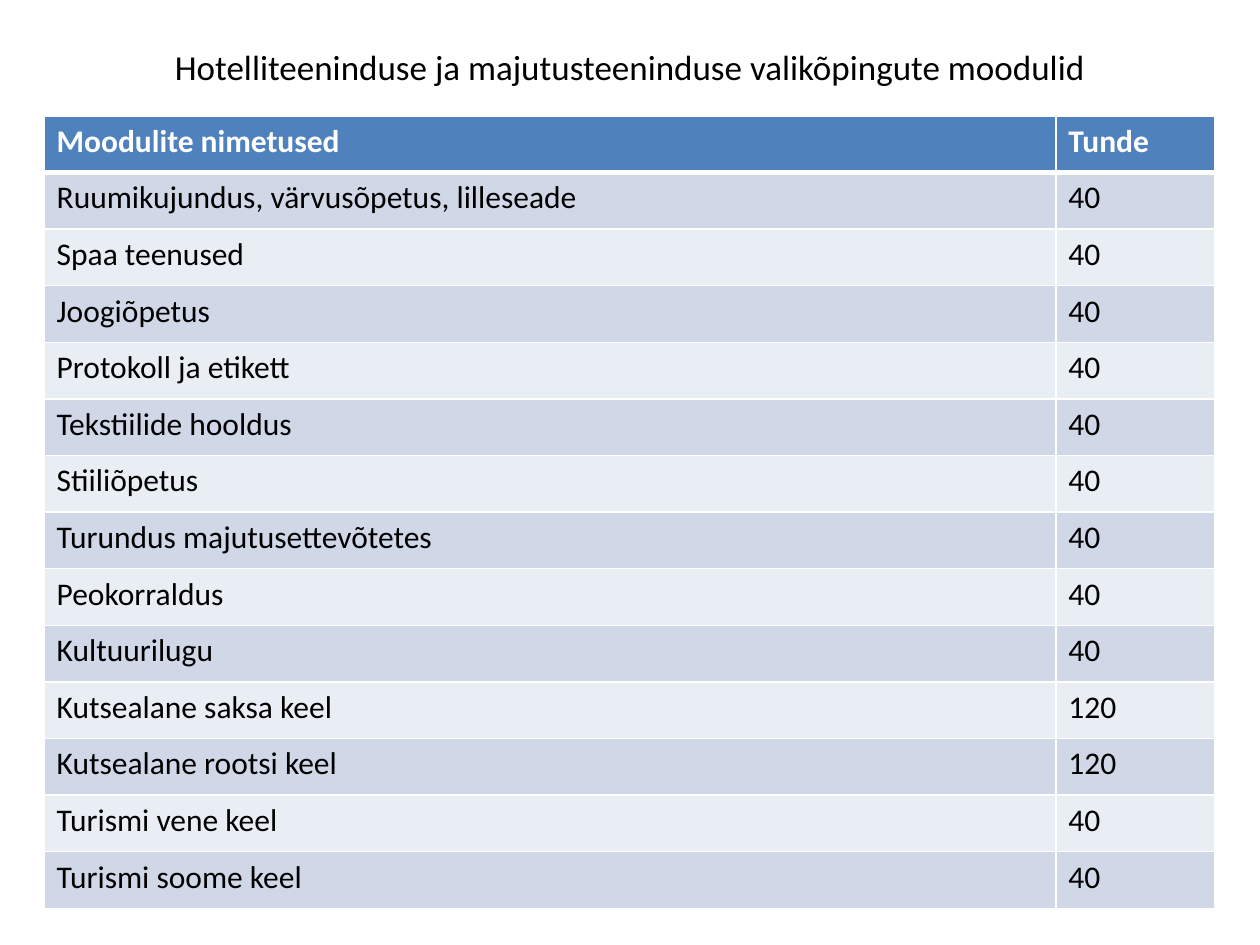
from typing import NamedTuple

from lxml.etree import SubElement
from pptx import Presentation
from pptx.dml.color import RGBColor
from pptx.enum.text import MSO_ANCHOR, PP_ALIGN
from pptx.oxml.ns import qn
from pptx.util import Inches, Pt


class Module(NamedTuple):
    name: str
    hours: int = 40


HEADINGS = ("Moodulite nimetused", "Tunde")
MODULES = [
    Module("Ruumikujundus, värvusõpetus, lilleseade"),
    Module("Spaa teenused"),
    Module("Joogiõpetus"),
    Module("Protokoll ja etikett"),
    Module("Tekstiilide hooldus"),
    Module("Stiiliõpetus"),
    Module("Turundus majutusettevõtetes"),
    Module("Peokorraldus"),
    Module("Kultuurilugu"),
    Module("Kutsealane saksa keel", 120),
    Module("Kutsealane rootsi keel", 120),
    Module("Turismi vene keel"),
    Module("Turismi soome keel"),
]
COLUMN_WIDTHS = (8.03, 1.26)
TABLE_HEIGHT = 6.29
HEADER_FILL = "4F81BD"
BAND_FILLS = ("D0D8E8", "E9EDF4")
WHITE, BLACK = "FFFFFF", "000000"


def rgb(value: str) -> RGBColor:
    return RGBColor.from_string(value)


def style_text(paragraph, size: float, color: str, bold: bool = False) -> None:
    font = paragraph.font
    font.name, font.size, font.bold = "Calibri", Pt(size), bold
    font.color.rgb = rgb(color)


def set_borders(cell, top: float = 1, bottom: float = 1) -> None:
    """Draw white cell borders; widths are in points."""
    properties = cell._tc.get_or_add_tcPr()
    for side, width in (("L", 1), ("R", 1), ("T", top), ("B", bottom)):
        line = SubElement(properties, qn(f"a:ln{side}"), w=str(Pt(width)))
        fill = SubElement(line, qn("a:solidFill"))
        SubElement(fill, qn("a:srgbClr"), val=WHITE)


def add_title(slide, text: str) -> None:
    title = slide.shapes.add_textbox(Inches(0.5), Inches(0.3), Inches(9), Inches(0.46))
    frame = title.text_frame
    frame.word_wrap = True
    frame.vertical_anchor = MSO_ANCHOR.MIDDLE
    frame.text = text
    frame.paragraphs[0].alignment = PP_ALIGN.CENTER
    style_text(frame.paragraphs[0], 20, BLACK)


def add_module_table(slide, modules: list[Module]) -> None:
    rows = [HEADINGS, *modules]
    table = slide.shapes.add_table(
        len(rows), len(HEADINGS), Inches(0.35), Inches(0.92),
        Inches(sum(COLUMN_WIDTHS)), Inches(TABLE_HEIGHT),
    ).table
    for column, width in zip(table.columns, COLUMN_WIDTHS):
        column.width = Inches(width)
    for index, values in enumerate(rows):
        is_header = index == 0
        table.rows[index].height = Inches(TABLE_HEIGHT / len(rows))
        for cell, value in zip(table.rows[index].cells, values):
            cell.text = str(value)
            style_text(cell.text_frame.paragraphs[0], 18,
                       WHITE if is_header else BLACK, bold=is_header)
            set_borders(cell, top=3 if index == 1 else 1, bottom=3 if is_header else 1)
            cell.fill.solid()
            cell.fill.fore_color.rgb = rgb(
                HEADER_FILL if is_header else BAND_FILLS[(index - 1) % 2])


def main() -> None:
    presentation = Presentation()
    presentation.slide_width, presentation.slide_height = Inches(10), Inches(7.5)
    slide = presentation.slides.add_slide(presentation.slide_layouts[6])
    add_title(slide, "Hotelliteeninduse ja majutusteeninduse valikõpingute moodulid")
    add_module_table(slide, MODULES)
    presentation.save("out.pptx")


if __name__ == "__main__":
    main()
